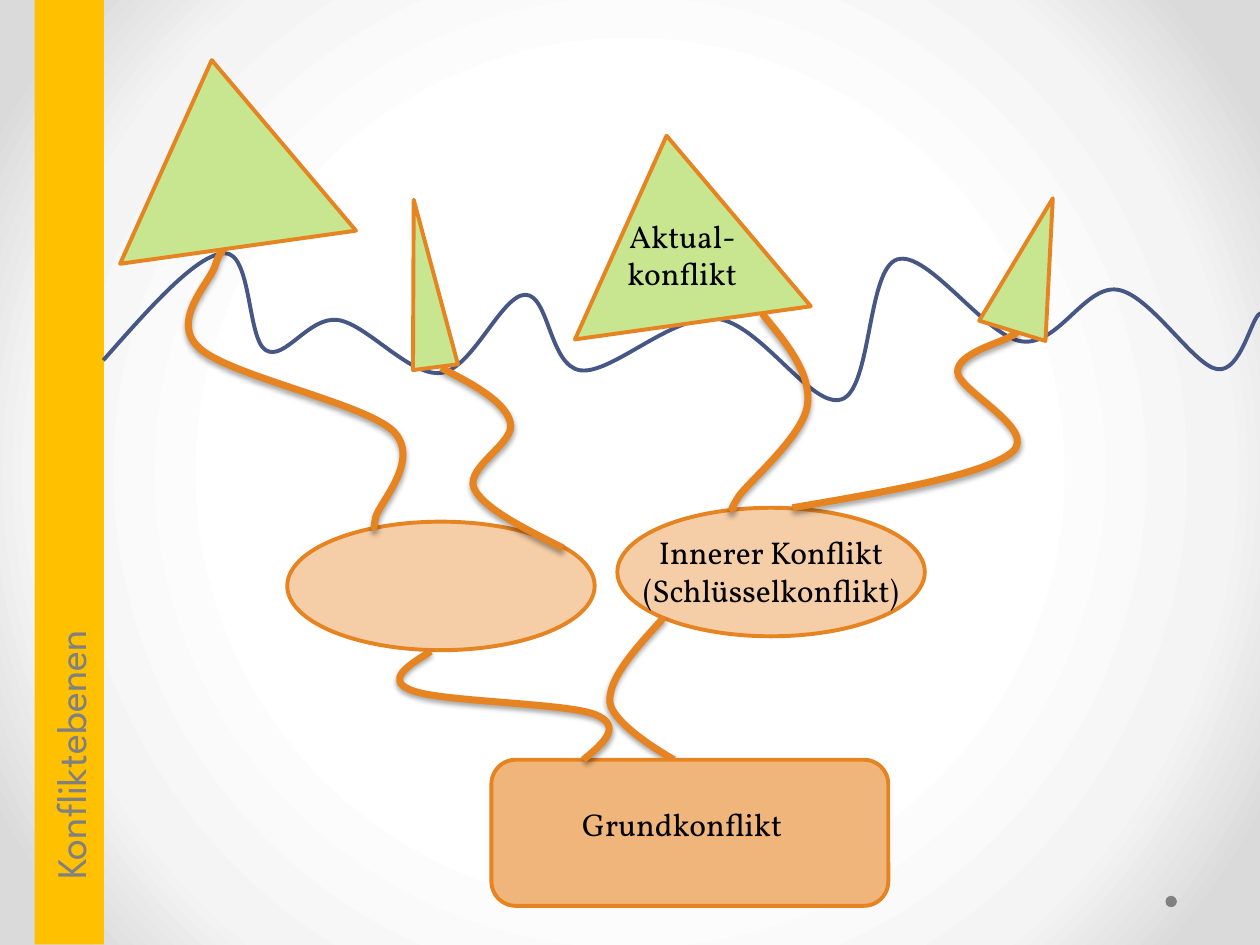
from pptx import Presentation
from pptx import util as u
from pptx.dml.color import RGBColor
from pptx.enum import shapes as s, text as t
from pptx.oxml import parse_xml
from pptx.oxml.ns import nsdecls, qn

# Content: all positions in inches (left, top, width, height)
TITLE = "Konfliktebenen"
ORANGE, GREEN, BLUE = "E68422", "C7E68F", "475785"
PEACH, APRICOT, YELLOW, GREY = "F5CEA7", "F0B57A", "FFC000", "808080"
GRADIENT = [(50, "FFFFFF"), (76, "F4F4F4"), (92, "DADADA")]

INNER_CONFLICTS = [(2.28, 4.14, 2.44, 1.02), (4.9, 4.03, 2.44, 1.02)]
BASE_CONFLICT = (3.9, 6.03, 3.15, 1.16)
CURRENT_CONFLICTS = [  # box, rotation
    ((0.84, 0.47, 1.89, 1.5), 352),
    ((3.19, 1.58, 0.36, 1.34), 352.6),
    ((4.45, 1.07, 1.89, 1.5), 352),
    ((7.92, 1.55, 0.55, 1.1), 17),
]
LABELS = [
    (["Aktual-", "konflikt"], (0.83, 1.67, 9.17, 0.71)),
    (["Innerer Konflikt", "(Schlüsselkonflikt)"], (4.9, 4.18, 2.44, 0.71)),
    (["Grundkonflikt"], (0.83, 6.34, 9.17, 0.4)),
]

# Curves: a start point, then three points for each Bézier segment
SURFACE = [
    (0.82, 2.86), (1.19, 2.44), (1.56, 2.02), (1.78, 2.01),
    (2, 2), (1.96, 2.69), (2.11, 2.78), (2.26, 2.87), (2.45, 2.51), (2.68, 2.54),
    (2.91, 2.57), (3.25, 2.99), (3.5, 2.96), (3.75, 2.93), (3.98, 2.34), (4.17, 2.34),
    (4.36, 2.34), (4.36, 2.91), (4.61, 2.94), (4.86, 2.97), (5.34, 2.49), (5.69, 2.53),
    (6.04, 2.57), (6.44, 3.25), (6.68, 3.17), (6.92, 3.09), (6.88, 2.14), (7.12, 2.06),
    (7.36, 1.98), (7.82, 2.67), (8.11, 2.71), (8.4, 2.75), (8.61, 2.26), (8.87, 2.3),
    (9.13, 2.34), (9.47, 2.9), (9.66, 2.93), (9.85, 2.96), (9.93, 2.52), (10, 2.49),
    (10.07, 2.46), (10.07, 2.6), (10.08, 2.74),
]
ROOTS_BEHIND_BASE = [
    [(6.05, 2.49), (6.25, 2.73), (6.44, 2.97), (6.41, 3.21), (6.38, 3.45),
     (5.97, 3.8), (5.87, 3.93), (5.78, 4.07), (5.81, 4.05), (5.83, 4.02)],
    [(5.27, 4.9), (5.05, 5.14), (4.83, 5.38), (4.84, 5.57),
     (4.86, 5.76), (5.35, 6.03), (5.35, 6.03)],
]
ROOTS_IN_FRONT = [
    [(6.29, 4.03), (7.05, 3.9), (7.81, 3.77), (8.03, 3.59), (8.25, 3.41),
     (7.6, 3.1), (7.6, 2.95), (7.6, 2.8), (7.95, 2.72), (8.02, 2.67),
     (8.09, 2.62), (8.06, 2.65), (8.03, 2.67)],
    [(4.47, 4.35), (4.15, 4.19), (3.83, 4.03), (3.76, 3.87), (3.7, 3.7),
     (4.1, 3.51), (4.05, 3.35), (4.01, 3.19), (3.76, 3.05), (3.5, 2.92)],
    [(1.79, 2), (1.77, 1.99), (1.75, 1.98), (1.71, 2.1), (1.68, 2.23),
     (1.34, 2.54), (1.58, 2.76), (1.81, 2.98), (2.89, 3.2), (3.12, 3.42),
     (3.35, 3.65), (3, 4), (2.98, 4.11), (2.96, 4.23), (2.97, 4.18), (2.98, 4.12)],
    [(3.42, 5.17), (3.24, 5.28), (3.05, 5.4), (3.27, 5.48), (3.49, 5.57),
     (4.49, 5.58), (4.72, 5.67), (4.95, 5.76), (4.79, 5.9), (4.63, 6.03)],
]


def lengths(values):
    return [u.Cm(value * 2.54) for value in values]


def color(target, value):
    if hasattr(target, "solid"):
        target.solid()
        target = target.fore_color
    target.rgb = RGBColor.from_string(value)


def outline(shape, value, width):
    color(shape.line.fill, value)
    shape.line.width = u.Pt(width)


def add_shape(slide, kind, box, fill, line=ORANGE, rotation=0):
    shape = slide.shapes.add_shape(kind, *lengths(box))
    shape.shadow.inherit = False
    shape.rotation = rotation
    color(shape.fill, fill)
    if line:
        outline(shape, line, 2.25)
    else:
        shape.line.fill.background()


def add_curve(slide, points, line, width, shadow=False):
    start, *rest = [lengths(point) for point in points]
    builder = slide.shapes.build_freeform(*start)
    builder.add_line_segments(rest, close=False)
    shape = builder.convert_to_shape()
    shape.fill.background()
    outline(shape, line, width)
    shape.shadow.inherit = False
    # Join every three straight segments into one Bézier segment
    segments = list(shape.element.iter(qn("a:lnTo")))
    for first in range(0, len(segments), 3):
        bezier = parse_xml(f"<a:cubicBezTo {nsdecls('a')}/>")
        segments[first].addprevious(bezier)
        for segment in segments[first:first + 3]:
            bezier.append(segment[0])
            segment.getparent().remove(segment)
    if shadow:
        effects = next(shape.element.iter(qn("a:effectLst")))
        effects.append(parse_xml(
            f'<a:outerShdw {nsdecls("a")} blurRad="{u.Pt(3.1)}" dist="{u.Pt(1.8)}" '
            'dir="5400000" rotWithShape="0"><a:srgbClr val="000000">'
            '<a:alpha val="35000"/></a:srgbClr></a:outerShdw>'))


def add_label(slide, lines, box):
    frame = slide.shapes.add_textbox(*lengths(box)).text_frame
    frame.word_wrap = True
    frame.text = "\n".join(lines)
    for paragraph in frame.paragraphs:
        paragraph.alignment = t.PP_ALIGN.CENTER
        paragraph.font.name = "Vollkorn"
        paragraph.font.size = u.Pt(18)
        color(paragraph.font.color, "000000")


def set_background(slide):
    slide.background.fill.gradient()
    gradient = next(slide.element.iter(qn("a:gradFill")))
    stops = "".join(f'<a:gs pos="{position * 1000}"><a:srgbClr val="{value}"/></a:gs>'
                    for position, value in GRADIENT)
    gradient.getparent().replace(gradient, parse_xml(
        f'<a:gradFill {nsdecls("a")} rotWithShape="1"><a:gsLst>{stops}</a:gsLst>'
        '<a:path path="circle"><a:fillToRect l="50000" t="50000" r="50000" b="50000"/>'
        '</a:path></a:gradFill>'))


def set_title(slide):
    title = slide.shapes.title
    title.left, title.top, title.width, title.height = lengths((-3.2, 3.47, 7.5, 0.55))
    title.rotation = 270
    color(title.fill, YELLOW)
    frame = title.text_frame
    frame.text = TITLE
    frame.auto_size = t.MSO_AUTO_SIZE.NONE
    frame.vertical_anchor = t.MSO_ANCHOR.MIDDLE
    frame.margin_left = u.Cm(1.3)
    paragraph = frame.paragraphs[0]
    paragraph.alignment = t.PP_ALIGN.LEFT
    paragraph.font.name = "League Spartan"
    paragraph.font.size = u.Pt(24)
    color(paragraph.font.color, GREY)


def main():
    presentation = Presentation()
    presentation.slide_width, presentation.slide_height = lengths((10, 7.5))
    slide = presentation.slides.add_slide(presentation.slide_layouts[5])
    preset = s.MSO_SHAPE

    # Backdrop
    set_background(slide)
    set_title(slide)
    add_shape(slide, preset.OVAL, (9.25, 7.11, 0.09, 0.09), GREY, line=None)

    # Conflict levels, with the roots that join them
    for box in INNER_CONFLICTS:
        add_shape(slide, preset.OVAL, box, PEACH)
    add_curve(slide, SURFACE, BLUE, 2.25)
    for root in ROOTS_BEHIND_BASE:
        add_curve(slide, root, ORANGE, 4, shadow=True)
    add_shape(slide, preset.ROUNDED_RECTANGLE, BASE_CONFLICT, APRICOT)
    for root in ROOTS_IN_FRONT:
        add_curve(slide, root, ORANGE, 4, shadow=True)
    for box, rotation in CURRENT_CONFLICTS:
        add_shape(slide, preset.ISOSCELES_TRIANGLE, box, GREEN, rotation=rotation)

    # Labels
    for lines, box in LABELS:
        add_label(slide, lines, box)

    presentation.save("out.pptx")


if __name__ == "__main__":
    main()
